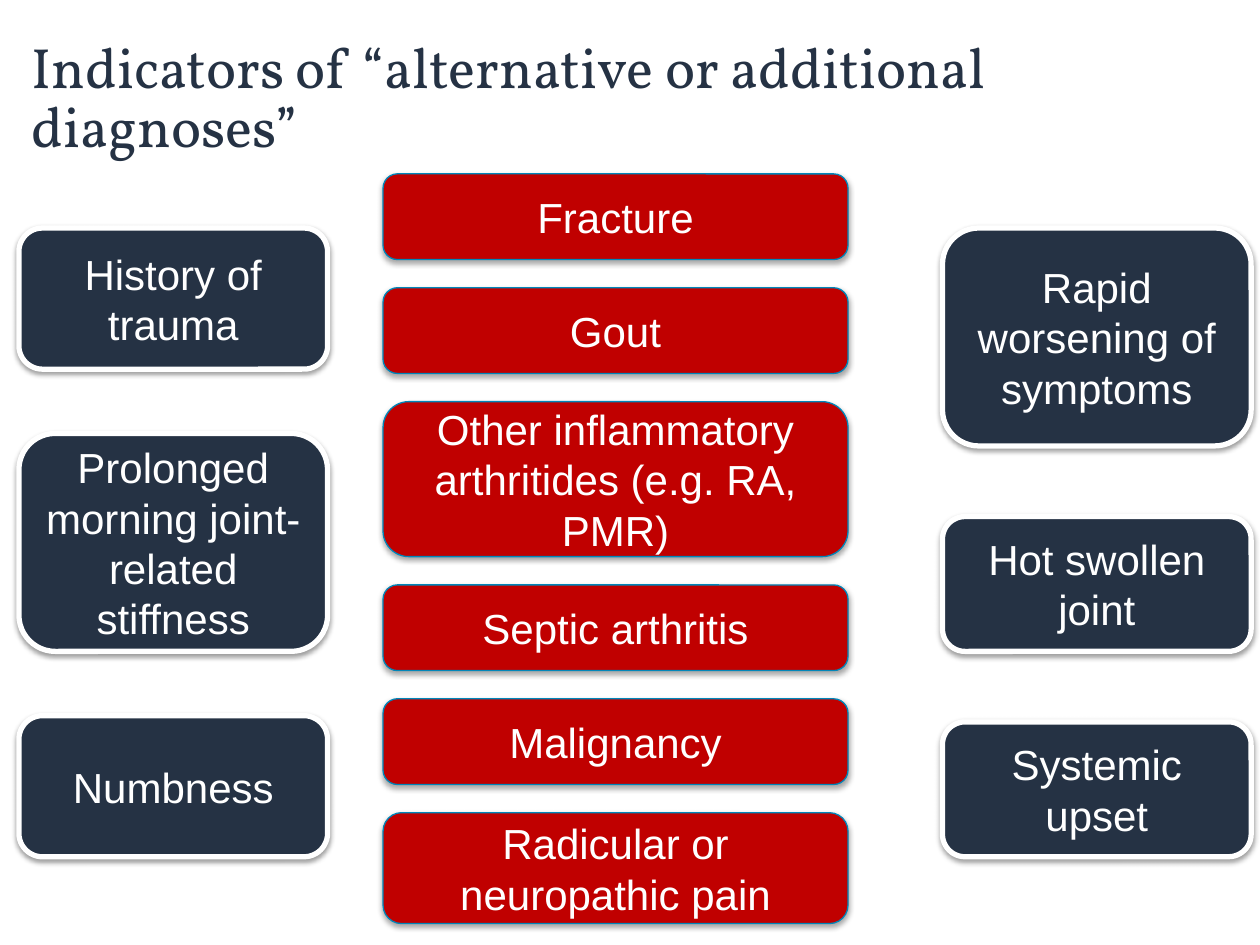
from lxml.etree import SubElement
from pptx import Presentation
from pptx.dml.color import RGBColor
from pptx.enum.shapes import MSO_SHAPE
from pptx.enum.text import MSO_ANCHOR, PP_ALIGN
from pptx.oxml.ns import qn
from pptx.util import Inches, Pt

NAVY = RGBColor(0x25, 0x32, 0x44)
RED = RGBColor(0xC0, 0x00, 0x00)
BLUE = RGBColor(0x00, 0x86, 0xB9)
WHITE = RGBColor(0xFF, 0xFF, 0xFF)

SIGN = {"fill": NAVY, "line": WHITE, "width": 3, "alpha": 38, "dist": 1.6}
DIAGNOSIS = {"fill": RED, "line": BLUE, "width": 0.75, "alpha": 35, "dist": 1.8}

LEFT_SIGNS = [
    ("History of trauma", 1.12),
    ("Prolonged morning joint-related stiffness", 1.73),
    ("Numbness", 1.12),
]
RIGHT_SIGNS = [
    ("Rapid worsening of symptoms", 1.73),
    ("Hot swollen joint", 1.07),
    ("Systemic upset", 1.07),
]
DIAGNOSES = [
    ("Fracture", 0.68),
    ("Gout", 0.68),
    ("Other inflammatory arthritides (e.g. RA, PMR)", 1.23),
    ("Septic arthritis", 0.68),
    ("Malignancy", 0.68),
    ("Radicular or neuropathic pain", 0.88),
]


class SlideBuilder:
    title_font = {"name": "Vollkorn", "size": Pt(32.4)}
    box_font = {"name": "Arial", "size": Pt(24)}

    def __init__(self, slide):
        self.s = slide

    def text(self, sp, text, font, color, align):
        tf = sp.text_frame
        tf.word_wrap = True
        tf.vertical_anchor = MSO_ANCHOR.MIDDLE
        p = tf.paragraphs[0]
        p.alignment = align
        r = p.add_run()
        r.text = text
        for name, value in font.items():
            setattr(r.font, name, value)
        r.font.color.rgb = color
        return tf

    def title(self, text, left, top, width, height):
        sp = self.s.shapes.add_textbox(*map(Inches, (left, top, width, height)))
        tf = self.text(sp, text, self.title_font, NAVY, PP_ALIGN.LEFT)
        tf.margin_top = Inches(0.25)
        tf.paragraphs[0].line_spacing = 0.86

    def shadow(self, sp, alpha, dist):
        """Give the shape a soft black shadow straight below it."""
        sp.shadow.inherit = False
        effects = sp._element.spPr.find(qn("a:effectLst"))
        outer = SubElement(effects, qn("a:outerShdw"), blurRad=str(Pt(3.1)),
                           dist=str(Pt(dist)), dir="5400000", rotWithShape="0")
        color = SubElement(outer, qn("a:srgbClr"), val="000000")
        SubElement(color, qn("a:alpha"), val=str(alpha * 1000))

    def box(self, text, left, top, width, height, look):
        sp = self.s.shapes.add_shape(MSO_SHAPE.ROUNDED_RECTANGLE,
                                     *map(Inches, (left, top, width, height)))
        sp.fill.solid()
        sp.fill.fore_color.rgb = look["fill"]
        sp.line.color.rgb = look["line"]
        sp.line.width = Pt(look["width"])
        self.shadow(sp, look["alpha"], look["dist"])
        self.text(sp, text, self.box_font, WHITE, PP_ALIGN.CENTER)

    def column(self, items, left, width, top, bottom, look):
        """Stack boxes with equal gaps between top and bottom."""
        used = sum(height for _, height in items)
        gap = (bottom - top - used) / (len(items) - 1)
        for text, height in items:
            self.box(text, left, top, width, height, look)
            top += height + gap


def main():
    prs = Presentation()
    prs.slide_width, prs.slide_height = Inches(10), Inches(7.5)
    builder = SlideBuilder(prs.slides.add_slide(prs.slide_layouts[6]))
    builder.title("Indicators of “alternative or additional diagnoses”",
                  0.15, 0.4, 7.92, 0.59)
    builder.column(LEFT_SIGNS, 0.15, 2.45, 1.81, 6.8, SIGN)
    builder.column(DIAGNOSES, 3.04, 3.69, 1.38, 7.33, DIAGNOSIS)
    builder.column(RIGHT_SIGNS, 7.48, 2.45, 1.81, 6.8, SIGN)
    prs.save("out.pptx")


if __name__ == "__main__":
    main()
